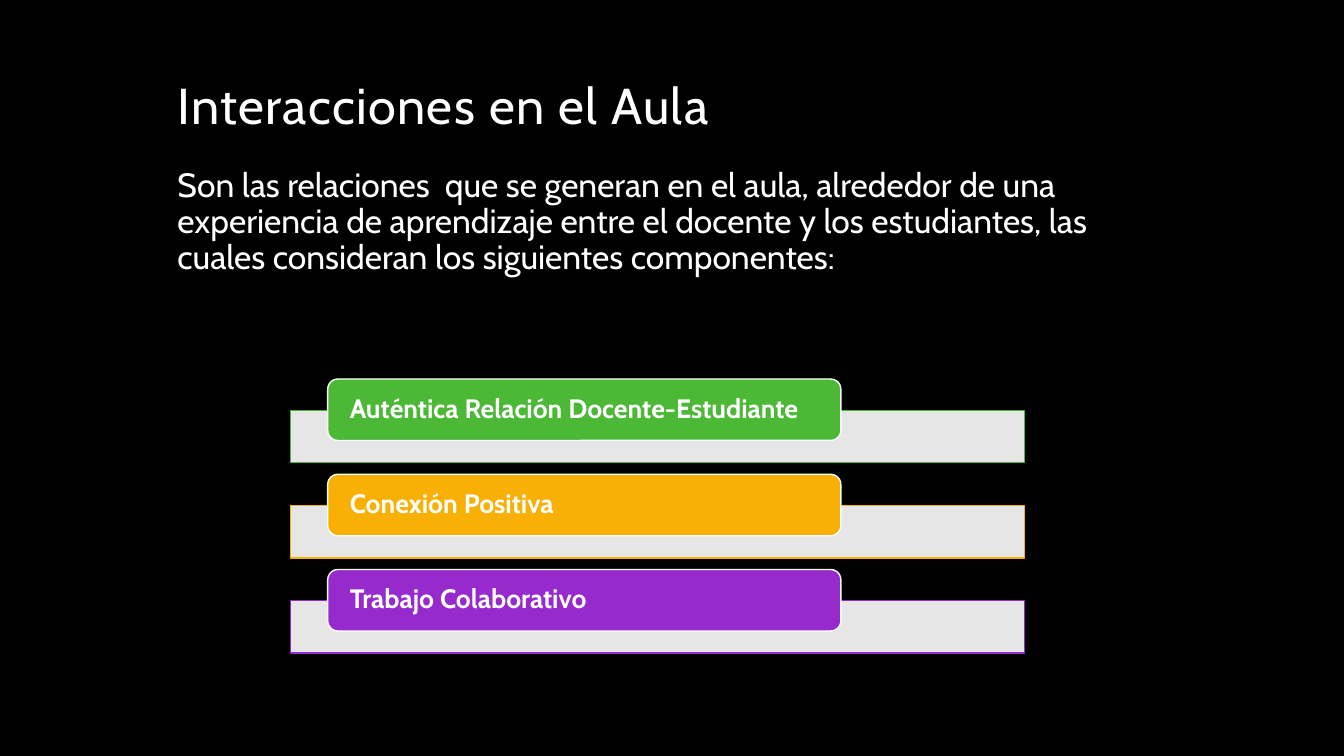
from lxml.etree import SubElement
from pptx import Presentation
from pptx.dml.color import RGBColor
from pptx.enum.shapes import MSO_SHAPE
from pptx.enum.text import MSO_ANCHOR, MSO_AUTO_SIZE, PP_ALIGN
from pptx.oxml.ns import qn
from pptx.util import Emu, Pt

PX = 9144
WHITE = "FFFFFF"
COMPONENTS = [
    ("Auténtica Relación Docente-Estudiante", "4BB836"),
    ("Conexión Positiva", "F8B004"),
    ("Trabajo Colaborativo", "972ACD"),
]


def px(n):
    """Turn px into EMU."""
    return Emu(int(n * PX))


def rgb(value):
    """Turn a hex string into a colour."""
    return RGBColor.from_string(value)


def write(sp, text, size, bold=False, anchor=MSO_ANCHOR.TOP, inset=(10, 5), spacing=None):
    """Fill a shape with one left-aligned white paragraph."""
    tf = sp.text_frame
    tf.word_wrap = True
    tf.auto_size = MSO_AUTO_SIZE.NONE
    tf.vertical_anchor = anchor
    tf.margin_left = tf.margin_right = px(inset[0])
    tf.margin_top = tf.margin_bottom = px(inset[1])
    p = tf.paragraphs[0]
    p.alignment = PP_ALIGN.LEFT
    p.line_spacing = 0.9
    p.space_before = Pt(0)
    r = p.add_run()
    r.text = text
    r.font.name = "Cabin"
    r.font.size = Pt(size)
    r.font.bold = bold
    r.font.color.rgb = rgb(WHITE)
    if spacing:
        r.font._element.set("spc", str(spacing))
    return p


def place(sp, x, y, w, h):
    """Move and size a placeholder."""
    sp.left, sp.top, sp.width, sp.height = px(x), px(y), px(w), px(h)


def add_heading(s, x, y, w, h):
    """Place the title and the introduction under it."""
    title, body = s.placeholders
    place(title, x, y, w, 103)
    write(title, "Interacciones en el Aula", 36, anchor=MSO_ANCHOR.BOTTOM, spacing=100)
    place(body, x, y + 126, w, h - 126)
    p = write(body, "Son las relaciones  que se generan en el aula, alrededor de una "
              "experiencia de aprendizaje entre el docente y los estudiantes, las "
              "cuales consideran los siguientes componentes:", 24)
    pPr = p._p.get_or_add_pPr()
    pPr.set("marL", "0")
    pPr.set("indent", "0")
    SubElement(pPr, qn("a:buNone"))


def add_box(group, kind, x, y, w, h, fill, line):
    """Add a filled and outlined shape without shadow."""
    sp = group.shapes.add_shape(kind, px(x), px(y), px(w), px(h))
    sp.shadow.inherit = False
    sp.fill.solid()
    sp.fill.fore_color.rgb = rgb(fill)
    sp.line.color.rgb = rgb(line)
    sp.line.width = Pt(1)
    return sp


def add_components(s, x, y, w, h):
    """Stack one bar with a coloured label per component."""
    group = s.shapes.add_group_shape()
    step = (h - 83) / (len(COMPONENTS) - 1)
    for i, (text, color) in enumerate(COMPONENTS):
        top = y + i * step
        bar = add_box(group, MSO_SHAPE.RECTANGLE, x, top + 31, w, 52, WHITE, color)
        tint = bar.fill._xPr.find(qn("a:solidFill"))[0]
        SubElement(tint, qn("a:alpha"), val="90000")
        label = add_box(group, MSO_SHAPE.ROUNDED_RECTANGLE, x + 37, top, 509, 61, color, WHITE)
        write(label, text, 19, bold=True, anchor=MSO_ANCHOR.MIDDLE, inset=(19, 0))


def main():
    """Build the slide and save it."""
    prs = Presentation()
    prs.slide_width, prs.slide_height = px(1333), px(750)
    s = prs.slides.add_slide(prs.slide_layouts[1])
    s.background.fill.solid()
    s.background.fill.fore_color.rgb = rgb("000000")
    add_heading(s, 166, 36, 1000, 261)
    add_components(s, 288, 376, 728, 272)
    prs.save("out.pptx")


if __name__ == "__main__":
    main()
